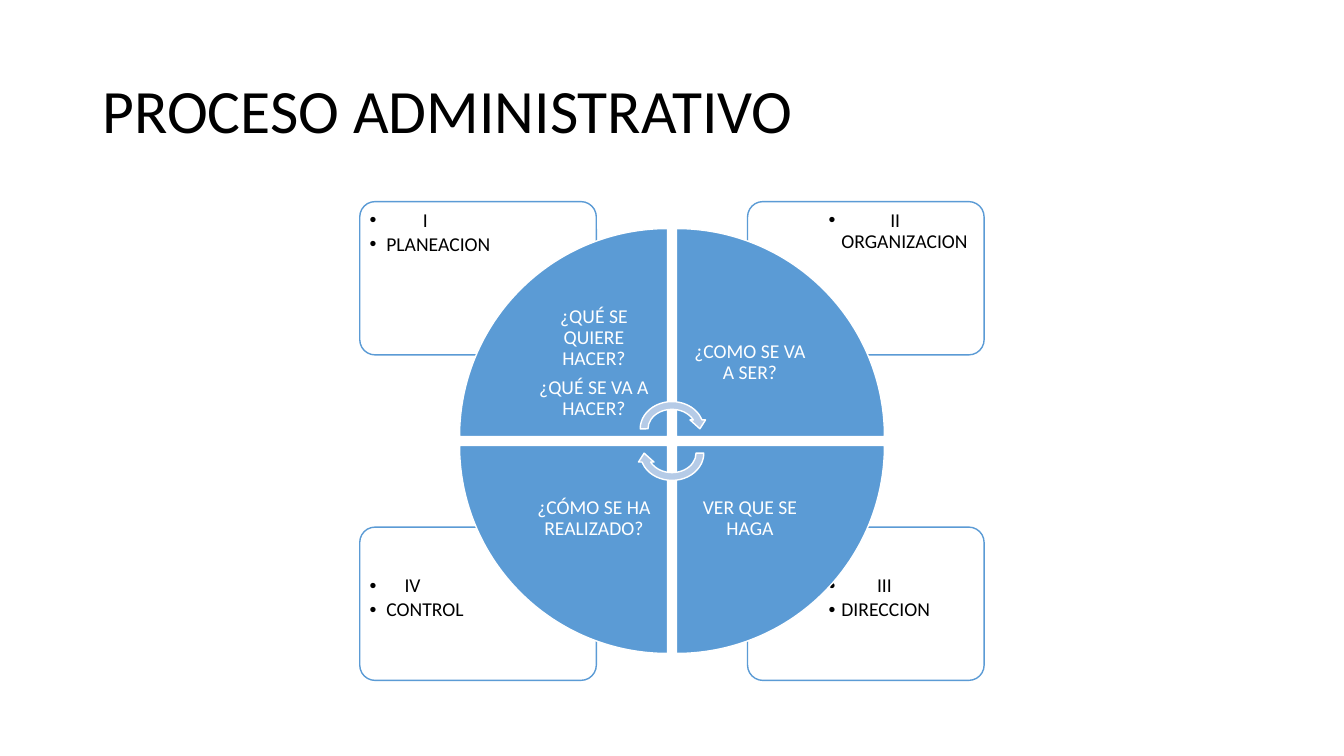
from lxml import etree
from pptx import Presentation
from pptx import util as u
from pptx.dml.color import RGBColor
from pptx.enum import shapes, text
from pptx.oxml.ns import qn

Pt = u.Pt
COLORS = {"blue": "5B9BD5", "pale": "B5CBE7", "white": "FFFFFF", "black": "000000"}
FONT = "Calibri"
CENTER_X, CENTER_Y = 480, 315
CARD = (169, 109.5)
CARD_LABEL = (114, 78)
WEDGE = (148.5, 148.5)
WEDGE_LABEL = (105, 105)
ARROW = (51, 44.5)

STAGES = [
    (1, 1, 180, [("\tIII", 9, 34.5), ("DIRECCION", 9, None)], ["VER QUE SE HAGA"]),
    (-1, 1, 270, [("\tIV", 9, 25), ("CONTROL", 12, None)], ["¿CÓMO SE HA REALIZADO?"]),
    (1, -1, 90, [("\tII ORGANIZACION", 9, 44)], ["¿COMO SE VA A SER?"]),
    (-1, -1, 0, [("\tI", 9, 38), ("PLANEACION", 12, None)],
     ["¿QUÉ SE QUIERE HACER?", "¿QUÉ SE VA A HACER?"]),
]


def color(name):
    return RGBColor.from_string(COLORS[name])


def quadrant(side_x, side_y, gap_x, gap_y, size):
    width, height = size
    left = CENTER_X + gap_x if side_x > 0 else CENTER_X - gap_x - width
    top = CENTER_Y + gap_y if side_y > 0 else CENTER_Y - gap_y - height
    return [Pt(v) for v in (left, top, width, height)]


def add_figure(slide, preset, box, fill, line, rotation=0):
    figure = slide.shapes.add_shape(preset, *box)
    figure.shadow.inherit = False
    figure.fill.solid()
    figure.fill.fore_color.rgb = color(fill)
    figure.line.color.rgb = color(line)
    figure.line.width = Pt(1)
    figure.rotation = rotation
    return figure


def write_run(paragraph, words, size, ink):
    run = paragraph.add_run()
    run.text = words
    run.font.size = Pt(size)
    run.font.name = FONT
    run.font.color.rgb = color(ink)
    paragraph.line_spacing = 0.9


def add_label(slide, box, lines, inset, anchor, ink, gap_after):
    frame = slide.shapes.add_textbox(*box).text_frame
    frame.word_wrap = True
    frame.vertical_anchor = anchor
    frame.margin_left = frame.margin_right = Pt(inset)
    frame.margin_top = frame.margin_bottom = Pt(inset)
    for number, words in enumerate(lines):
        paragraph = frame.add_paragraph() if number else frame.paragraphs[0]
        write_run(paragraph, words, 14, ink)
        paragraph.space_after = Pt(gap_after)
    return frame


def set_bullet(paragraph, indent, tab):
    properties = paragraph._p.get_or_add_pPr()
    properties.set("marL", str(Pt(indent)))
    properties.set("indent", str(-Pt(indent)))
    etree.SubElement(properties, qn("a:buFont"), typeface="Arial")
    etree.SubElement(properties, qn("a:buChar"), char="•")
    if tab:
        stops = etree.SubElement(properties, qn("a:tabLst"))
        etree.SubElement(stops, qn("a:tab"), pos=str(Pt(tab)), algn="l")


def add_card(slide, side_x, side_y, items):
    card = add_figure(slide, shapes.MSO_SHAPE.ROUNDED_RECTANGLE,
                      quadrant(side_x, side_y, 54, 61.5, CARD), "white", "blue")
    card.adjustments[0] = 0.1
    tint = card._element.spPr.find(qn("a:solidFill"))[0]
    etree.SubElement(tint, qn("a:alpha"), val="90000")
    frame = add_label(slide, quadrant(side_x, side_y, 107, 91.5, CARD_LABEL),
                      [words for words, _, _ in items], 5, text.MSO_ANCHOR.TOP, "black", 2)
    for paragraph, (_, indent, tab) in zip(frame.paragraphs, items):
        set_bullet(paragraph, indent, tab)


def add_wedge(slide, side_x, side_y, rotation, questions):
    add_figure(slide, shapes.MSO_SHAPE.PIE_WEDGE,
               quadrant(side_x, side_y, 3.25, 3.25, WEDGE), "blue", "white", rotation)
    frame = add_label(slide, quadrant(side_x, side_y, 3.25, 3.25, WEDGE_LABEL),
                      questions, 8, text.MSO_ANCHOR.MIDDLE, "white", 5.5)
    for paragraph in frame.paragraphs:
        paragraph.alignment = text.PP_ALIGN.CENTER


def add_arrow(slide, offset, rotation):
    width, height = ARROW
    box = (CENTER_X - width / 2, CENTER_Y + offset - height / 2, width, height)
    add_figure(slide, shapes.MSO_SHAPE.CIRCULAR_ARROW, [Pt(v) for v in box],
               "pale", "white", rotation)


def set_title(slide, words):
    title = slide.shapes.title
    title.left, title.top, title.width, title.height = Pt(66), Pt(29), Pt(828), Pt(104)
    title.text_frame.vertical_anchor = text.MSO_ANCHOR.MIDDLE
    heading = title.text_frame.paragraphs[0]
    heading.alignment = text.PP_ALIGN.LEFT
    write_run(heading, words, 44, "black")


def main():
    deck = Presentation()
    deck.slide_width, deck.slide_height = Pt(960), Pt(540)
    slide = deck.slides.add_slide(deck.slide_layouts[5])
    set_title(slide, "PROCESO ADMINISTRATIVO")
    for side_x, side_y, _, items, _ in STAGES:
        add_card(slide, side_x, side_y, items)
    for side_x, side_y, rotation, _, questions in reversed(STAGES):
        add_wedge(slide, side_x, side_y, rotation, questions)
    for offset, rotation in ((-8.65, 0), (8.65, 180)):
        add_arrow(slide, offset, rotation)
    deck.save("out.pptx")


if __name__ == "__main__":
    main()
